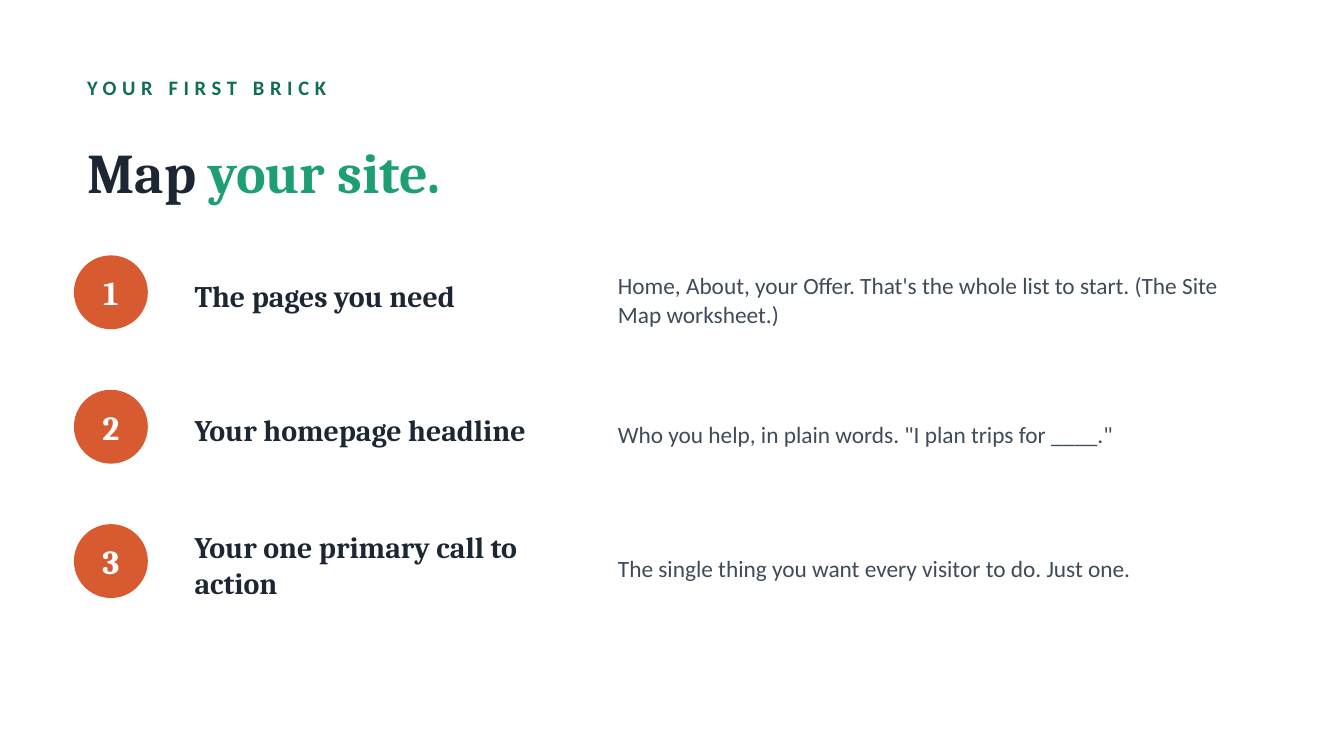
from dataclasses import dataclass

from pptx import Presentation
from pptx.dml.color import RGBColor
from pptx.enum import shapes, text
from pptx.util import Inches, Pt


@dataclass(frozen=True)
class Theme:
    heading_font: str = "Cambria"
    body_font: str = "Calibri"
    ink: str = "1C2733"
    slate: str = "3F4B59"
    forest: str = "0F6E56"
    green: str = "1D9E75"
    orange: str = "D85A30"
    white: str = "FFFFFF"
    kicker_size: float = 11
    title_size: float = 30
    number_size: float = 18
    step_size: float = 16
    detail_size: float = 12.5


def write(frame, *spans, font, size, bold=False, align=text.PP_ALIGN.LEFT,
          line_spacing=None, tracking=None):
    frame.word_wrap = True
    frame.auto_size = text.MSO_AUTO_SIZE.NONE
    frame.vertical_anchor = text.MSO_ANCHOR.MIDDLE
    para = frame.paragraphs[0]
    para.alignment = align
    if line_spacing:
        para.line_spacing = line_spacing
    for words, color in spans:
        span = para.add_run()
        span.text = words
        span.font.name = font
        span.font.size = Pt(size)
        span.font.bold = bold
        span.font.color.rgb = RGBColor.from_string(color)
        if tracking:
            span.font._element.set("spc", str(tracking * 100))


class PageBuilder:
    def __init__(self, page, theme):
        self.page = page
        self.theme = theme

    def title(self, *spans, left, top, width, height):
        box = self.page.shapes.title
        box.left, box.top = Inches(left), Inches(top)
        box.width, box.height = Inches(width), Inches(height)
        write(box.text_frame, *spans, font=self.theme.heading_font,
              size=self.theme.title_size, bold=True)

    def label(self, words, left, top, width, height, color, **style):
        box = self.page.shapes.add_textbox(
            Inches(left), Inches(top), Inches(width), Inches(height))
        write(box.text_frame, (words, color), **style)

    def badge(self, words, left, top, size):
        theme = self.theme
        circle = self.page.shapes.add_shape(
            shapes.MSO_SHAPE.OVAL, Inches(left), Inches(top), Inches(size), Inches(size))
        circle.shadow.inherit = False
        circle.fill.solid()
        circle.fill.fore_color.rgb = RGBColor.from_string(theme.orange)
        circle.line.fill.background()
        frame = circle.text_frame
        frame.margin_left = frame.margin_right = 0
        frame.margin_top = frame.margin_bottom = 0
        write(frame, (words, theme.white), font=theme.heading_font,
              size=theme.number_size, bold=True, align=text.PP_ALIGN.CENTER)

    def step(self, number, heading, detail, top):
        theme = self.theme
        self.badge(str(number), 0.55, top + 0.05, 0.55)
        self.label(heading, 1.35, top, 3, 0.7, theme.ink,
                   font=theme.heading_font, size=theme.step_size, bold=True)
        self.label(detail, 4.5, top, 5, 0.75, theme.slate,
                   font=theme.body_font, size=theme.detail_size, line_spacing=1.05)


STEPS = [
    ("The pages you need",
     "Home, About, your Offer. That's the whole list to start. (The Site Map worksheet.)"),
    ("Your homepage headline",
     'Who you help, in plain words. "I plan trips for ____."'),
    ("Your one primary call to action",
     "The single thing you want every visitor to do. Just one."),
]


def main():
    theme = Theme()
    deck = Presentation()
    deck.slide_width = Inches(10)
    deck.slide_height = deck.slide_width * 9 // 16
    page = deck.slides.add_slide(deck.slide_layouts.get_by_name("Title Only"))
    page.background.fill.solid()
    page.background.fill.fore_color.rgb = RGBColor.from_string(theme.white)

    builder = PageBuilder(page, theme)
    builder.label("YOUR FIRST BRICK", 0.55, 0.5, 8.9, 0.3, theme.forest,
                  font=theme.body_font, size=theme.kicker_size, bold=True, tracking=3)
    builder.title(("Map ", theme.ink), ("your site.", theme.green),
                  left=0.55, top=0.85, width=8.9, height=0.85)
    for index, (heading, detail) in enumerate(STEPS):
        builder.step(index + 1, heading, detail, top=1.85 + index)

    deck.save("out.pptx")


if __name__ == "__main__":
    main()
